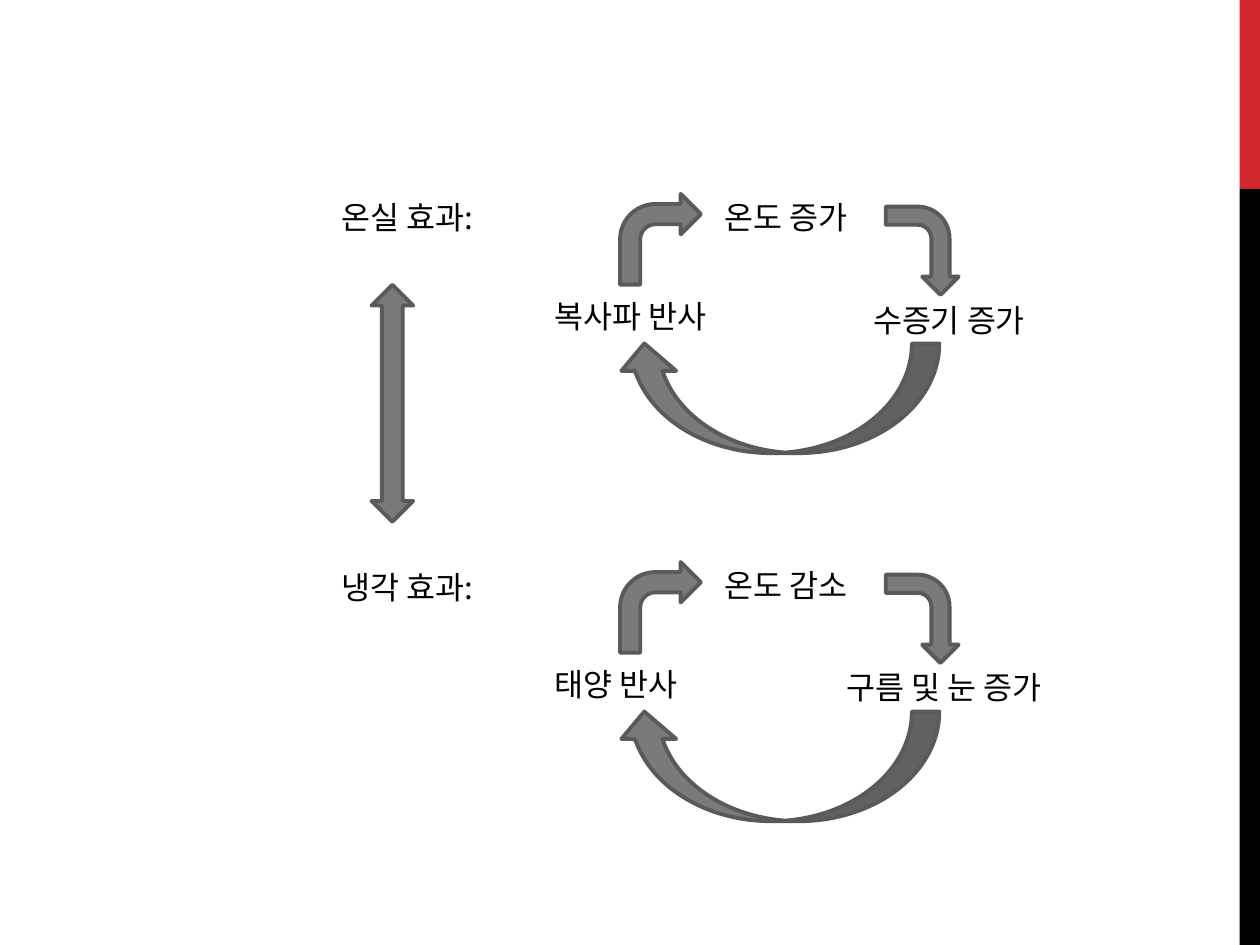
from lxml.etree import SubElement
from pptx import Presentation
from pptx.dml.color import RGBColor
from pptx.enum.shapes import MSO_SHAPE
from pptx.enum.text import MSO_AUTO_SIZE
from pptx.oxml.ns import qn
from pptx.util import Cm, Pt

FONT = "Noto Sans CJK KR"
CYCLE_STEP = 7.42


def color(hex_text):
    return RGBColor.from_string(hex_text)


def add_block(page, kind, left, top, width, height, fill, rotation=0):
    block = page.shapes.add_shape(kind, Cm(left), Cm(top), Cm(width), Cm(height))
    block.shadow.inherit = False
    block.rotation = rotation
    block.fill.solid()
    block.fill.fore_color.rgb = color(fill)
    block.line.fill.background()
    return block


def add_arrow(page, kind, left, top, width, height, rotation=0):
    arrow = add_block(page, kind, left, top, width, height, "7A7A7A", rotation)
    arrow.line.color.rgb = color("5A5A5A")
    arrow.line.width = Pt(2.25)


def add_label(page, text, left, top, width):
    box = page.shapes.add_textbox(Cm(left), Cm(top), Cm(width), Cm(1.03))
    frame = box.text_frame
    frame.word_wrap = False
    frame.auto_size = MSO_AUTO_SIZE.SHAPE_TO_FIT_TEXT
    span = frame.paragraphs[0].add_run()
    span.text = text
    span.font.size = Pt(18)
    span.font.name = FONT
    span.font.color.rgb = color("000000")
    # Korean glyphs take the East Asian typeface
    SubElement(span.font._element, qn("a:ea"), typeface=FONT)


def add_cycle(page, offset, labels):
    """Draw three labels joined into a loop, moved down by offset."""
    for text, left, top, width in labels:
        add_label(page, text, left, top + offset, width)
    add_arrow(page, MSO_SHAPE.BENT_ARROW, 12.5, 3.91 + offset, 1.63, 1.83)
    add_arrow(page, MSO_SHAPE.BENT_ARROW, 17.7, 4.32 + offset, 1.78, 1.47, 90)
    add_arrow(page, MSO_SHAPE.CURVED_LEFT_ARROW, 14.58, 4.78 + offset, 2.21, 6.5, 90)


def main():
    deck = Presentation()
    deck.slide_width, deck.slide_height = Cm(25.4), Cm(19.05)
    page = deck.slides.add_slide(deck.slide_layouts[6])

    add_block(page, MSO_SHAPE.RECTANGLE, 24.99, 0, 0.41, 3.81, "D1282E")
    add_block(page, MSO_SHAPE.RECTANGLE, 24.99, 3.81, 0.41, 15.24, "000000")

    add_label(page, "온실 효과:", 6.63, 3.86, 3.45)
    add_cycle(page, 0, [
        ("복사파 반사", 10.92, 5.87, 3.94),
        ("온도 증가", 14.35, 3.86, 3.3),
        ("수증기 증가", 17.35, 5.94, 3.94),
    ])

    add_label(page, "냉각 효과:", 6.63, 11.33, 3.45)
    add_cycle(page, CYCLE_STEP, [
        ("태양 반사", 10.92, 5.87, 3.3),
        ("온도 감소", 14.35, 3.86, 3.3),
        ("구름 및 눈 증가", 16.81, 5.92, 5.03),
    ])

    add_arrow(page, MSO_SHAPE.UP_DOWN_ARROW, 7.49, 5.74, 0.84, 4.78)
    deck.save("out.pptx")


if __name__ == "__main__":
    main()
